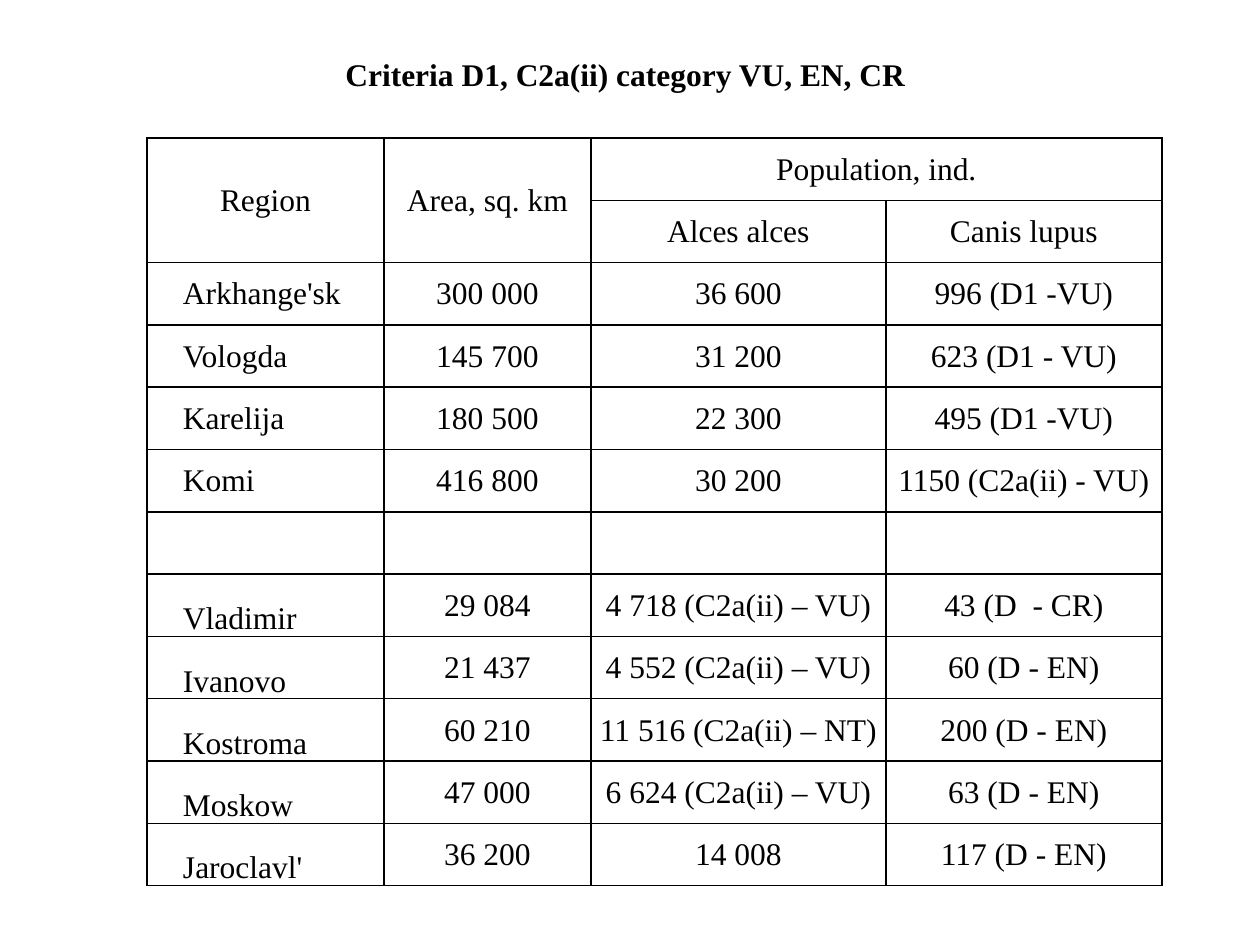
from dataclasses import dataclass

from lxml.etree import SubElement
from pptx import Presentation
from pptx.dml.color import RGBColor
from pptx.enum.text import MSO_ANCHOR, MSO_AUTO_SIZE, PP_ALIGN
from pptx.oxml.ns import qn
from pptx.util import Pt

EMU_PER_PX = 914400 / 126


@dataclass(frozen=True)
class Theme:
    font: str = "Times New Roman"
    size: int = 18
    ink: str = "000000"
    border: int = 1


@dataclass(frozen=True)
class Region:
    name: str
    area: str = ""
    moose: str = ""
    wolf: str = ""
    anchor: MSO_ANCHOR = MSO_ANCHOR.MIDDLE


THEME = Theme()
LOW = MSO_ANCHOR.BOTTOM
COLUMN_WIDTHS = (237, 207, 295, 276)
TABLE_LEFT, TABLE_TOP, TABLE_HEIGHT = 147, 138, 748
NAME_INDENT = 35
HEADERS = (
    ("Region", "Area, sq. km", "Population, ind.", ""),
    ("", "", "Alces alces", "Canis lupus"),
)
REGIONS = (
    Region("Arkhange'sk", "300 000", "36 600", "996 (D1 -VU)"),
    Region("Vologda", "145 700", "31 200", "623 (D1 - VU)"),
    Region("Karelija", "180 500", "22 300", "495 (D1 -VU)"),
    Region("Komi", "416 800", "30 200", "1150 (C2a(ii) - VU)"),
    Region(""),
    Region("Vladimir", "29 084", "4 718 (C2a(ii) – VU)", "43 (D  - CR)", LOW),
    Region("Ivanovo", "21 437", "4 552 (C2a(ii) – VU)", "60 (D - EN)", LOW),
    Region("Kostroma", "60 210", "11 516 (C2a(ii) – NT)", "200 (D - EN)", LOW),
    Region("Moskow", "47 000", "6 624 (C2a(ii) – VU)", "63 (D - EN)", LOW),
    Region("Jaroclavl'", "36 200", "14 008", "117 (D - EN)", LOW),
)


def px(n: float) -> int:
    return round(n * EMU_PER_PX)


def write(tf, text: str, *, bold=False, align=PP_ALIGN.CENTER, indent=0) -> None:
    p = tf.paragraphs[0]
    p.alignment = align
    p.font.size = Pt(THEME.size)
    if indent:
        pPr = p._p.get_or_add_pPr()
        pPr.set("marL", str(px(indent)))
        pPr.set("indent", "0")
    if text:
        r = p.add_run()
        r.text = text
        r.font.name = THEME.font
        r.font.size = Pt(THEME.size)
        r.font.bold = bold
        r.font.color.rgb = RGBColor.from_string(THEME.ink)


def add_borders(cell) -> None:
    tcPr = cell._tc.get_or_add_tcPr()
    for side in ("lnL", "lnR", "lnT", "lnB"):
        ln = SubElement(tcPr, qn(f"a:{side}"), w=str(Pt(THEME.border)))
        fill = SubElement(ln, qn("a:solidFill"))
        SubElement(fill, qn("a:srgbClr"), val=THEME.ink)


def fill_cell(cell, text: str, *, anchor=MSO_ANCHOR.MIDDLE, **text_format) -> None:
    add_borders(cell)
    cell.fill.background()
    cell.margin_left = cell.margin_right = cell.margin_top = px(1)
    cell.margin_bottom = 0
    cell.vertical_anchor = anchor
    write(cell.text_frame, text, **text_format)


def add_title(slide, text: str) -> None:
    title = slide.shapes.title
    title.left, title.top, title.width, title.height = map(px, (286, 49, 679, 50))
    tf = title.text_frame
    tf.word_wrap = True
    tf.auto_size = MSO_AUTO_SIZE.NONE
    tf.vertical_anchor = MSO_ANCHOR.MIDDLE
    write(tf, text, bold=True)


def add_population_table(slide) -> None:
    row_count = len(HEADERS) + len(REGIONS)
    table = slide.shapes.add_table(
        row_count, len(COLUMN_WIDTHS), px(TABLE_LEFT), px(TABLE_TOP),
        px(sum(COLUMN_WIDTHS)), px(TABLE_HEIGHT),
    ).table
    table.first_row = table.horz_banding = False
    for column, width in zip(table.columns, COLUMN_WIDTHS):
        column.width = px(width)
    for row in table.rows:
        row.height = px(TABLE_HEIGHT / row_count)

    for i, labels in enumerate(HEADERS):
        for j, label in enumerate(labels):
            fill_cell(table.cell(i, j), label)
    for i, region in enumerate(REGIONS, start=len(HEADERS)):
        fill_cell(table.cell(i, 0), region.name, anchor=region.anchor,
                  align=PP_ALIGN.LEFT, indent=NAME_INDENT)
        for j, value in enumerate((region.area, region.moose, region.wolf), start=1):
            fill_cell(table.cell(i, j), value)

    for first, last in (((0, 0), (1, 0)), ((0, 1), (1, 1)), ((0, 2), (0, 3))):
        table.cell(*first).merge(table.cell(*last))


def main() -> None:
    prs = Presentation()
    prs.slide_width, prs.slide_height = px(1260), px(945)
    s = prs.slides.add_slide(prs.slide_layouts[5])
    add_title(s, "Criteria D1, C2a(ii) category VU, EN, CR")
    add_population_table(s)
    prs.save("out.pptx")


if __name__ == "__main__":
    main()
